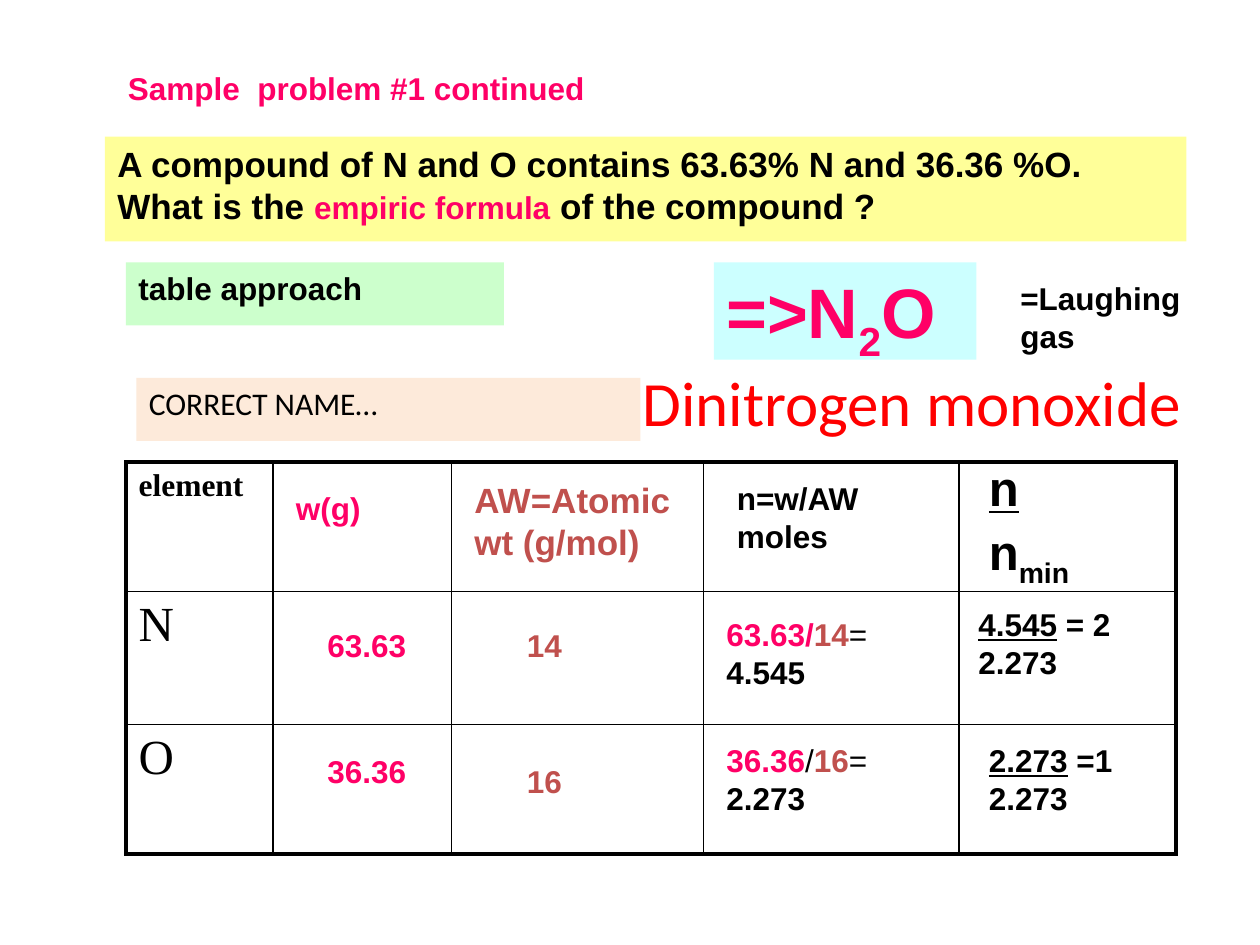
"""Build the slide that works out the empiric formula of N2O with a table."""
import pptx
import pptx.dml.color
import pptx.enum.shapes
import pptx.oxml
import pptx.oxml.ns
import pptx.util

Pt = pptx.util.Pt
THEME = {
    "pink": "FF0066", "brick": "C0504D", "black": "000000", "red": "FF0000",
    "yellow": "FFFF99", "green": "CCFFCC", "cyan": "CCFFFF", "peach": "FDEADA",
    "body": 18, "question": 20, "symbol": 28, "name": 36, "answer": 40,
    "sans": "Arial", "serif": "Times New Roman", "plain": "Calibri",
    "outer": 2.25, "inner": 1,
}


def rgb(name):
    return pptx.dml.color.RGBColor.from_string(THEME[name])


def write(frame, paragraphs, font="sans", gap=0):
    """Each span is (text, colour, size, marks): b bold, u underline, s subscript."""
    frame.text = "\n".join("" for _ in paragraphs)
    for para, spans in zip(frame.paragraphs, paragraphs):
        para.space_before = Pt(gap)
        for text, colour, size, marks in spans:
            span = para.add_run()
            span.text = text
            span.font.name = THEME[font]
            span.font.size = Pt(THEME[size])
            span.font.color.rgb = rgb(colour)
            span.font.bold = "b" in marks
            span.font.underline = "u" in marks
            if "s" in marks:
                span.font._element.set("baseline", "-25000")


deck = pptx.Presentation()
deck.slide_width, deck.slide_height = Pt(720), Pt(540)
page = deck.slides.add_slide(deck.slide_layouts[6])

panels = [
    (60, 78, 618, 60, "yellow", "sans", [
        ("A compound of N and O contains 63.63% N and 36.36 %O. What is the ", "black", "question", "b"),
        ("empiric formula", "pink", "body", "b"),
        (" of the compound ?", "black", "question", "b")]),
    (72, 150, 216, 36, "green", "sans", [("table approach", "black", "body", "b")]),
    (408, 150, 150, 55.5, "cyan", "sans", [
        ("=>N", "pink", "answer", "b"), ("2", "pink", "answer", "bs"), ("O", "pink", "answer", "b")]),
    (78, 216, 288, 36, "peach", "plain", [("CORRECT NAME…", "black", "body", "")]),
]
for left, top, width, height, fill, font, spans in panels:
    panel = page.shapes.add_shape(pptx.enum.shapes.MSO_SHAPE.RECTANGLE,
                                  Pt(left), Pt(top), Pt(width), Pt(height))
    panel.shadow.inherit = False
    panel.fill.solid()
    panel.fill.fore_color.rgb = rgb(fill)
    panel.line.fill.background()
    panel.text_frame.word_wrap = True
    panel.text_frame.vertical_anchor = pptx.enum.text.MSO_ANCHOR.TOP
    write(panel.text_frame, [spans], font)
    panel.text_frame.paragraphs[0].alignment = pptx.enum.text.PP_ALIGN.LEFT

column_widths = [84, 102, 144, 146, 124]
row_heights = [74, 76, 74]
row_labels = [("element", "black", "body", "b"), ("N", "black", "symbol", ""), ("O", "black", "symbol", "")]
last_row, last_column = len(row_heights) - 1, len(column_widths) - 1
table = page.shapes.add_table(len(row_heights), len(column_widths), Pt(72), Pt(264),
                              Pt(sum(column_widths)), Pt(sum(row_heights))).table
table.first_row = table.horz_banding = False
for column, width in zip(table.columns, column_widths):
    column.width = Pt(width)
for r, height in enumerate(row_heights):
    table.rows[r].height = Pt(height)
    write(table.cell(r, 0).text_frame, [[row_labels[r]]], "serif")
    for c in range(len(column_widths)):
        cell = table.cell(r, c)
        edges = {"L": c == 0, "R": c == last_column, "T": r == 0, "B": r == last_row}
        for side, is_outer in edges.items():
            weight = Pt(THEME["outer" if is_outer else "inner"])
            cell._tc.get_or_add_tcPr().append(pptx.oxml.parse_xml(
                f'<a:ln{side} {pptx.oxml.ns.nsdecls("a")} w="{int(weight)}"><a:solidFill>'
                f'<a:srgbClr val="{THEME["black"]}"/></a:solidFill></a:ln{side}>'))
        cell.fill.background()

labels = [
    (66, 36, 600, 29, "Sample  problem #1 continued", "pink", "body"),
    (162, 276, 96, 36, "w(g)", "pink", "body"),
    (180, 354, 78, 36, "63.63", "pink", "body"),
    (180, 426, 84, 36, "36.36", "pink", "body"),
    (264, 270, 144, 55.5, "AW=Atomic wt (g/mol)", "brick", "question"),
    (294, 354, 72, 36, "14", "brick", "body"),
    (294, 432, 78, 36, "16", "brick", "body"),
    (576, 156, 108, 50.5, "=Laughing gas", "black", "body"),
]
notes = [(left, top, width, height, "sans", 0, [[(text, colour, size, "b")]])
         for left, top, width, height, text, colour, size in labels]
notes += [
    (360, 204, 360, 51, "plain", 0, [[("Dinitrogen monoxide", "red", "name", "")]]),
    (414, 270, 126, 65, "sans", 0, [[("n=w/AW", "black", "body", "b")], [("moles", "black", "body", "b")]]),
    (558, 258, 102, 78, "sans", 3, [
        [("n", "black", "symbol", "bu")],
        [("n", "black", "symbol", "b"), ("min", "black", "symbol", "bs")]]),
    (408, 348, 126, 65, "sans", 0, [
        [("63.63/", "pink", "body", "b"), ("14", "brick", "body", "b"), ("=", "black", "body", "")],
        [("4.545", "black", "body", "b")]]),
    (408, 420, 126, 65, "sans", 0, [
        [("36.36", "pink", "body", "b"), ("/", "black", "body", ""),
         ("16", "brick", "body", "b"), ("=", "black", "body", "")],
        [("2.273", "black", "body", "b")]]),
]
ratios = [(552, 342, 138, "4.545", " = 2"), (558, 420, 114, "2.273", " =1")]
for left, top, width, moles, result in ratios:
    notes.append((left, top, width, 65, "sans", 0, [
        [(moles, "black", "body", "bu"), (result, "black", "body", "b")],
        [("2.273", "black", "body", "b")]]))
for left, top, width, height, font, gap, paragraphs in notes:
    box = page.shapes.add_textbox(Pt(left), Pt(top), Pt(width), Pt(height))
    box.text_frame.word_wrap = True
    write(box.text_frame, paragraphs, font, gap)

deck.save("out.pptx")
